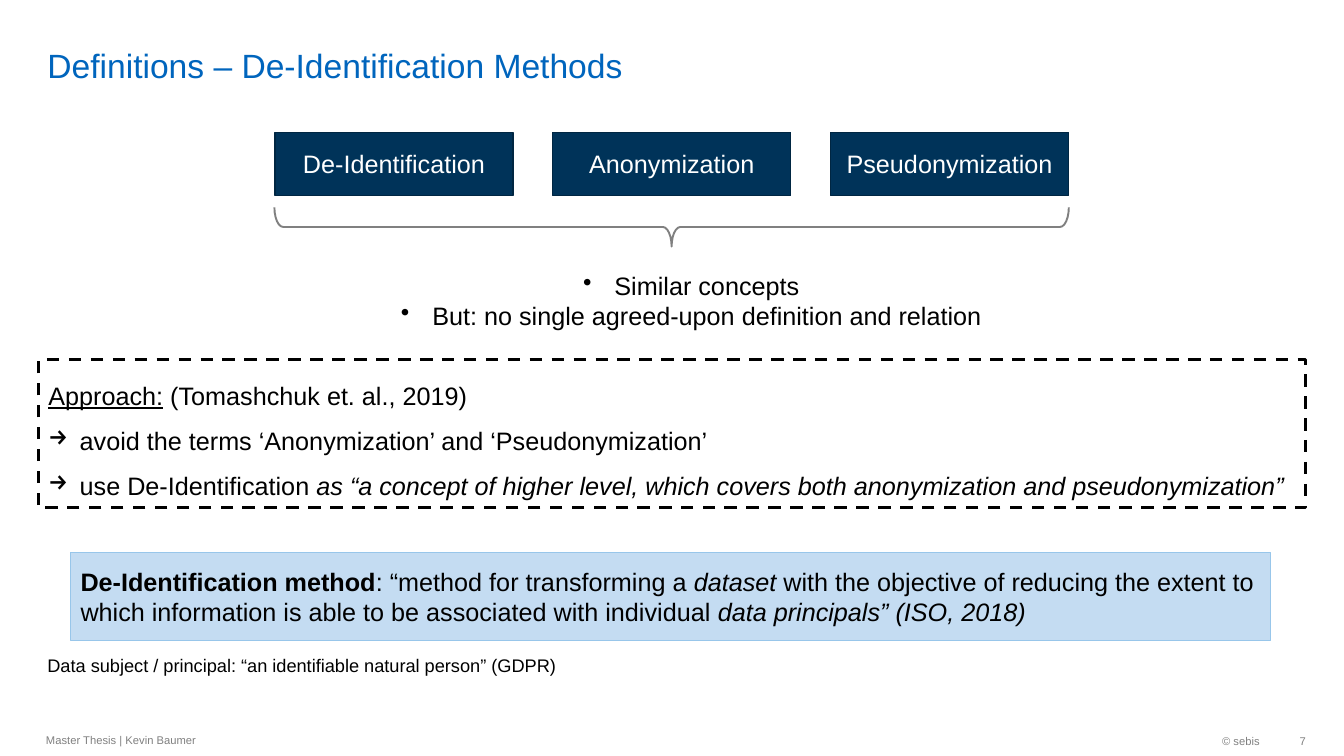
from lxml import etree
from pptx import Presentation
from pptx import util as u
from pptx.dml.color import RGBColor
from pptx.enum import dml, shapes, text
from pptx.oxml.ns import qn

COLOURS = {
    "title": "0065BD",
    "text": "000000",
    "footer": "808080",
    "white": "FFFFFF",
    "term": "003359",
    "term_line": "002642",
    "method": "C4DCF2",
    "method_line": "98C6EA",
    "brace": "808080",
}
TERMS = ["De-Identification", "Anonymization", "Pseudonymization"]
TERM_LEFT, TERM_STEP = 6.93, 7
CONCEPTS = ["Similar concepts", "But: no single agreed-upon definition and relation"]
APPROACH = [
    [("Approach:", "u"), (" (Tomashchuk et. al., 2019)", "")],
    [("avoid the terms ‘Anonymization’ and ‘Pseudonymization’", "")],
    [("use De-Identification ", ""),
     ("as “a concept of higher level, which covers both anonymization and pseudonymization”", "i")],
]
METHOD = [
    ("De-Identification method", "b"),
    (": “method for transforming a ", ""),
    ("dataset ", "i"),
    ("with the objective of reducing the extent to which information is able "
     "to be associated with individual ", ""),
    ("data principals” (ISO, 2018)", "i"),
]
LEFT, CENTER, RIGHT = text.PP_ALIGN.LEFT, text.PP_ALIGN.CENTER, text.PP_ALIGN.RIGHT
TOP, MIDDLE, BOTTOM = text.MSO_ANCHOR.TOP, text.MSO_ANCHOR.MIDDLE, text.MSO_ANCHOR.BOTTOM


def colour(name):
    """Return the named colour."""
    return RGBColor.from_string(COLOURS[name])


def lengths(place):
    """Turn left, top, width and height in centimetres into lengths."""
    return [u.Cm(value) for value in place]


def write(box, paragraphs, size=18, ink="text", align=LEFT, anchor=TOP):
    """Write paragraphs of (text, style) spans into a box."""
    frame = box.text_frame
    frame.word_wrap = True
    frame.auto_size = text.MSO_AUTO_SIZE.NONE
    frame.vertical_anchor = anchor
    for index, spans in enumerate(paragraphs):
        para = frame.add_paragraph() if index else frame.paragraphs[0]
        para.alignment = align
        for words, style in spans:
            span = para.add_run()
            span.text = words
            font = span.font
            font.name, font.size = "Arial", u.Pt(size)
            font.color.rgb = colour(ink)
            font.bold, font.italic, font.underline = (key in style for key in "biu")


def set_bullet(para, mark=None, margin=0, hang=0):
    """Give a paragraph a bullet with a hanging indent, or no bullet."""
    properties = para._p.get_or_add_pPr()
    properties.set("marL", str(u.Cm(margin)))
    properties.set("indent", str(-u.Cm(hang)))
    bullet = etree.SubElement(properties, qn("a:buChar" if mark else "a:buNone"))
    if mark:
        bullet.set("char", mark)


def add_outline(page, kind, place, line, width, fill=None):
    """Add a preset shape with a line and an optional fill."""
    shape = page.shapes.add_shape(kind, *lengths(place))
    shape.shadow.inherit = False
    if fill:
        shape.fill.solid()
        shape.fill.fore_color.rgb = colour(fill)
    else:
        shape.fill.background()
    shape.line.color.rgb = colour(line)
    shape.line.width = u.Pt(width)
    return shape


def fill_placeholder(box, place, words, **style):
    """Move a placeholder and write one line into it."""
    box.left, box.top, box.width, box.height = lengths(place)
    write(box, [[(words, "")]], **style)


def add_text(page, place, paragraphs, **style):
    """Add a text box."""
    box = page.shapes.add_textbox(*lengths(place))
    write(box, paragraphs, **style)
    return box


def add_footer(page, place, words, align):
    """Add one small grey footer text."""
    return add_text(page, place, [[(words, "")]], size=8, ink="footer",
                    align=align, anchor=MIDDLE)


def add_terms(page):
    """Add the row of terms and the brace below it."""
    for index, term in enumerate(TERMS):
        place = (TERM_LEFT + index * TERM_STEP, 3.33, 6, 1.6)
        box = add_outline(page, shapes.MSO_SHAPE.RECTANGLE, place, "term_line", 0.85, "term")
        write(box, [[(term, "")]], ink="white", align=CENTER, anchor=MIDDLE)
    brace = add_outline(page, shapes.MSO_SHAPE.RIGHT_BRACE,
                        (16.43, -4.29, 0.99, 20.02), "brace", 1.35)
    brace.rotation = 90
    brace.adjustments[0] = 0.224


def add_concepts(page):
    """Add the centred list of concepts."""
    box = add_text(page, (8.38, 6.68, 17.09, 2.57),
                   [[(concept, "")] for concept in CONCEPTS], align=CENTER)
    for para in box.text_frame.paragraphs:
        para.level = 1
        set_bullet(para, "•", 1.78, 0.79)


def add_approach(page):
    """Add the dashed frame with the approach."""
    box = add_outline(page, shapes.MSO_SHAPE.RECTANGLE,
                      (0.97, 9.07, 31.93, 3.73), "text", 2.25)
    box.line.dash_style = dml.MSO_LINE.DASH
    write(box, APPROACH)
    for index, para in enumerate(box.text_frame.paragraphs):
        para.line_spacing = 1.5
        if index:
            set_bullet(para, "→", 0.79, 0.79)


def add_method(page):
    """Add the highlighted definition."""
    box = add_outline(page, shapes.MSO_SHAPE.RECTANGLE,
                      (1.78, 13.92, 30.25, 2.21), "method_line", 0.75, "method")
    write(box, [METHOD], anchor=MIDDLE)


def main():
    """Build the slide and save it."""
    deck = Presentation()
    deck.slide_width, deck.slide_height = u.Cm(33.87), u.Cm(19.05)
    page = deck.slides.add_slide(deck.slide_layouts[1])
    title, note = page.shapes.title, page.placeholders[1]
    fill_placeholder(title, (0.94, 0.13, 29.41, 2.01),
                     "Definitions – De-Identification Methods",
                     size=24, ink="title", anchor=BOTTOM)
    title.text_frame.margin_top = title.text_frame.margin_bottom = 0
    fill_placeholder(note, (0.94, 16.36, 32, 1.75),
                     "Data subject / principal: “an identifiable natural person” (GDPR)",
                     size=13)
    note_line = note.text_frame.paragraphs[0]
    set_bullet(note_line)
    note_line.space_before = u.Pt(0)
    add_footer(page, (26.06, 18.26, 5.94, 0.81), "© sebis", RIGHT)
    add_footer(page, (0.91, 18.24, 16, 0.81), "Master Thesis | Kevin Baumer", LEFT)
    number = add_footer(page, (32, 18.26, 0.91, 0.81), "7", RIGHT)
    number.text_frame.margin_right = 0
    add_method(page)
    add_terms(page)
    add_concepts(page)
    add_approach(page)
    deck.save("out.pptx")


if __name__ == "__main__":
    main()
